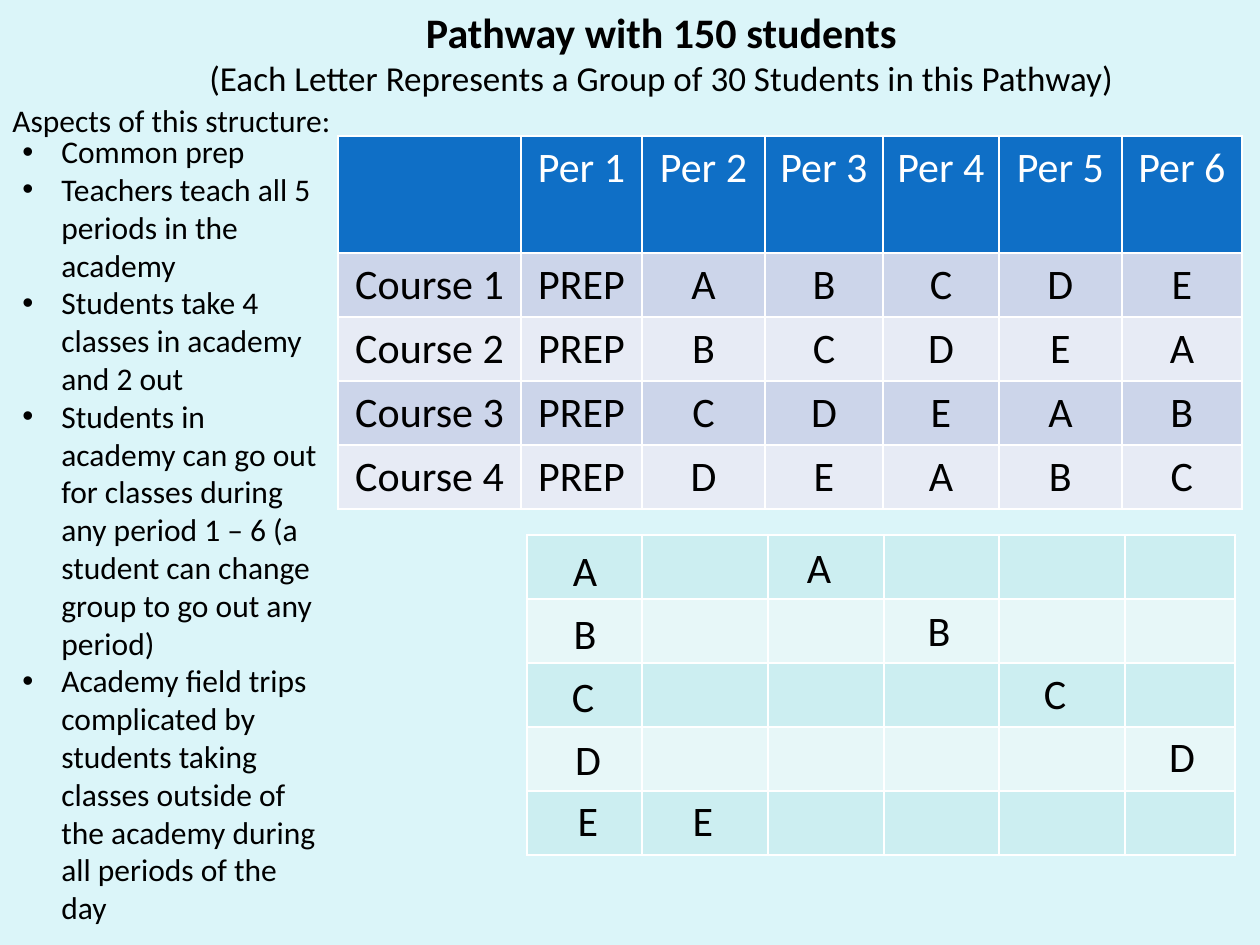
from dataclasses import dataclass

from lxml import etree
from pptx import Presentation
from pptx import util as u
from pptx.dml.color import RGBColor
from pptx.enum import text
from pptx.oxml import ns

PX = u.Inches(1) / 126


@dataclass
class Theme:
    font: str = "Calibri"
    background: str = "DBF5F9"
    ink: str = "000000"
    white: str = "FFFFFF"
    header: str = "0F6FC6"
    course_bands: tuple = ("CCD5EA", "E7EBF5")
    group_bands: tuple = ("CCEEF1", "E7F7F8")
    large: int = 24
    subtitle: int = 20
    body: int = 18


theme = Theme()


def add_run(p, words, size, color=theme.ink, bold=False):
    r = p.add_run()
    r.text = words
    r.font.name, r.font.size, r.font.bold = theme.font, u.Pt(size), bold
    r.font.color.rgb = RGBColor.from_string(color)


def add_grid(left, top, widths, heights, fills):
    """Add a table with one fill per row and thin white borders."""
    box = [round(n * PX) for n in (left, top, sum(widths), sum(heights))]
    table = s.shapes.add_table(len(heights), len(widths), *box).table
    for col, width in zip(table.columns, widths):
        col.width = round(width * PX)
    for row, height, fill in zip(table.rows, heights, fills):
        row.height = round(height * PX)
        for cell in row.cells:
            tcPr = cell._tc.get_or_add_tcPr()
            for side in ("lnL", "lnR", "lnT", "lnB"):
                ln = etree.SubElement(tcPr, ns.qn(f"a:{side}"), w=str(u.Pt(1)))
                solid = etree.SubElement(ln, ns.qn("a:solidFill"))
                etree.SubElement(solid, ns.qn("a:srgbClr"), val=theme.white)
            cell.fill.solid()
            cell.fill.fore_color.rgb = RGBColor.from_string(fill)
    return table


prs = Presentation()
prs.slide_width, prs.slide_height = u.Inches(10), u.Inches(7.5)
s = prs.slides.add_slide(prs.slide_layouts[5])
s.background.fill.solid()
s.background.fill.fore_color.rgb = RGBColor.from_string(theme.background)

# Title
title = s.shapes.title
title.left, title.top, title.width, title.height = [
    round(n * PX) for n in (147, 0, 1029, 158)]
tf = title.text_frame
tf.word_wrap = True
tf.auto_size = text.MSO_AUTO_SIZE.NONE
tf.vertical_anchor = text.MSO_ANCHOR.TOP
subtitle = "(Each Letter Represents a Group of 30 Students in this Pathway)"
p = tf.paragraphs[0]
p.alignment = text.PP_ALIGN.CENTER
add_run(p, "Pathway with 150 students", theme.large, bold=True)
p = tf.add_paragraph()
p.alignment = text.PP_ALIGN.CENTER
add_run(p, subtitle, theme.subtitle)

# Course schedule: each course starts one group later than the one above
groups = "ABCDE"
rows = [["", *(f"Per {n}" for n in range(1, 7))]]
for n in range(4):
    rows.append([f"Course {n + 1}", "PREP", *groups[n:], *groups[:n]])
schedule = add_grid(338, 136, [183, 121, 123, 118, 116, 123, 120],
                    [117] + [64] * 4, [theme.header, *theme.course_bands * 2])
for i, row in enumerate(rows):
    for j, words in enumerate(row):
        if words:
            p = schedule.cell(i, j).text_frame.paragraphs[0]
            p.alignment = text.PP_ALIGN.CENTER
            add_run(p, words, theme.large, theme.ink if i else theme.white)

# Periods in which each group goes out
add_grid(527, 535, [115, 126, 116, 115, 126, 110], [64] * 5,
         (theme.group_bands * 3)[:5])
first_at = [(527, 538), (527, 601), (525, 664), (530, 727), (530, 788)]
out_at = [(761, 535), (881, 598), (997, 661), (1124, 724), (645, 788)]
for group, *spots in zip(groups, first_at, out_at):
    for left, top in spots:
        sp = s.shapes.add_textbox(*[round(n * PX) for n in (left, top, 116, 63)])
        sp.text_frame.word_wrap = True
        p = sp.text_frame.paragraphs[0]
        p.alignment = text.PP_ALIGN.CENTER
        add_run(p, group, theme.large)

# Aspects of the structure
sp = s.shapes.add_textbox(*[round(n * PX) for n in (0, 95, 410, 50)])
sp.text_frame.word_wrap = True
add_run(sp.text_frame.paragraphs[0], "Aspects of this structure:", theme.body)

aspects = [
    "Common prep",
    "Teachers teach all 5 periods in the academy",
    "Students take 4 classes in academy and 2 out",
    "Students in academy can go out for classes during any period 1 – 6 "
    "(a student can change group to go out any period)",
    "Academy field trips complicated by students taking classes outside of "
    "the academy during all periods of the day",
]
sp = s.shapes.add_textbox(*[round(n * PX) for n in (10, 126, 325, 814)])
tf = sp.text_frame
tf.word_wrap = True
indent = round(39 * PX)
for i, aspect in enumerate(aspects):
    p = tf.add_paragraph() if i else tf.paragraphs[0]
    pPr = p._p.get_or_add_pPr()
    pPr.set("marL", str(indent))
    pPr.set("indent", str(-indent))
    etree.SubElement(pPr, ns.qn("a:buFont"), typeface="Arial")
    etree.SubElement(pPr, ns.qn("a:buChar"), char="•")
    add_run(p, aspect, theme.body)

prs.save("out.pptx")
